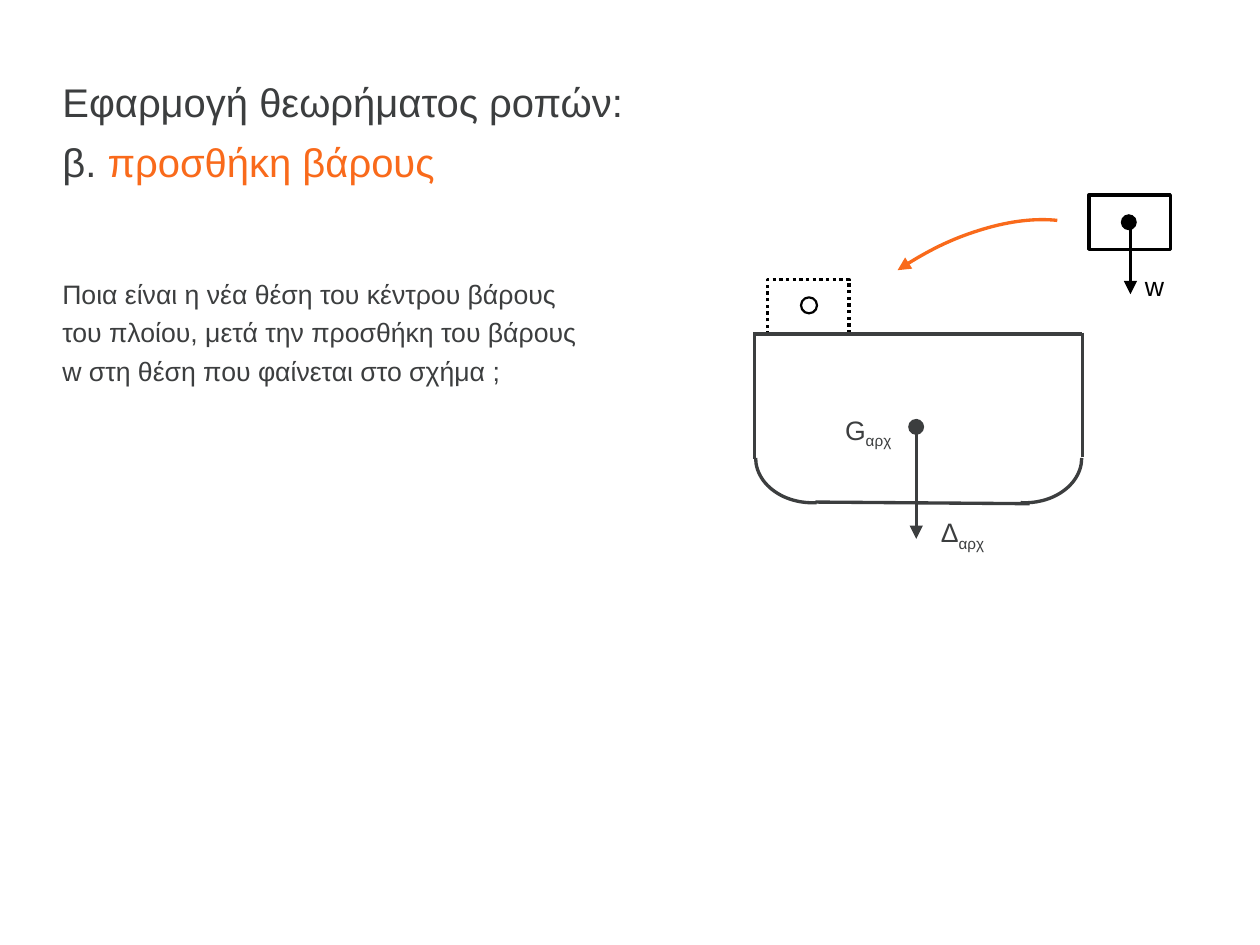
from lxml.etree import SubElement
from pptx import Presentation
from pptx.dml.color import RGBColor
from pptx.enum.dml import MSO_LINE
from pptx.enum.shapes import MSO_CONNECTOR, MSO_SHAPE
from pptx.enum.text import MSO_ANCHOR, PP_ALIGN
from pptx.oxml.ns import qn
from pptx.util import Inches, Pt

HUES = {"gray": "3C3E3F", "orange": "F96A1B", "black": "000000", "white": "FFFFFF"}


class Board:
    face = "Arial"
    pen = 1.5

    def __init__(self, slide):
        self.slide = slide
        self.area = slide.shapes

    def hue(self, name):
        return RGBColor.from_string(HUES[name])

    def group(self):
        self.area = self.slide.shapes.add_group_shape().shapes

    def ungroup(self):
        self.area = self.slide.shapes

    def stroke(self, item, color, width=pen, tip=None):
        item.line.color.rgb = self.hue(color)
        item.line.width = Pt(width)
        if tip:
            SubElement(item.line._get_or_add_ln(), qn(f"a:{tip}"), type="triangle")

    def shape(self, kind, box, fill=None, line=None, width=pen):
        item = self.area.add_shape(kind, *map(Inches, box))
        item.shadow.inherit = False
        if fill:
            item.fill.solid()
            item.fill.fore_color.rgb = self.hue(fill)
        else:
            item.fill.background()
        if line:
            self.stroke(item, line, width)
        else:
            item.line.fill.background()
        return item

    def dot(self, left, top, fill, line=None):
        return self.shape(MSO_SHAPE.OVAL, (left, top, 0.1, 0.1), fill, line, 1)

    def arc(self, box, turn, stop, color, flip=False, tip=None):
        item = self.shape(MSO_SHAPE.ARC, box)
        item.adjustments[0] = 162
        item.adjustments[1] = stop
        item.rotation = turn
        if flip:
            item._element.spPr.get_or_add_xfrm().set("flipH", "1")
        self.stroke(item, color, tip=tip)

    def line(self, x1, y1, x2, y2, color, tip=None):
        ends = map(Inches, (x1, y1, x2, y2))
        item = self.area.add_connector(MSO_CONNECTOR.STRAIGHT, *ends)
        self.stroke(item, color, tip=tip)
        SubElement(item._element.spPr, qn("a:effectLst"))

    def text(self, box, words, color="gray", size=12, space=1.2, pad=(0, 0),
             mid=False, center=False):
        frame = self.area.add_textbox(*map(Inches, box)).text_frame
        frame.word_wrap = True
        frame.margin_left = frame.margin_right = Inches(pad[0])
        frame.margin_top = frame.margin_bottom = Inches(pad[1])
        frame.vertical_anchor = MSO_ANCHOR.MIDDLE if mid else MSO_ANCHOR.TOP
        para = frame.paragraphs[0]
        para.alignment = PP_ALIGN.CENTER if center else PP_ALIGN.LEFT
        para.line_spacing = space
        para.font.name = self.face
        para.font.size = Pt(size)
        para.font.color.rgb = self.hue(color)
        para.add_run().text = words
        return para

    def label(self, box, words, sub=None, **style):
        para = self.text(box, words, center=True, **style)
        if sub:
            run = para.add_run()
            run.text = sub
            run._r.get_or_add_rPr().set("baseline", "-25000")


def main():
    deck = Presentation()
    deck.slide_width, deck.slide_height = Inches(7.88), Inches(5.91)
    board = Board(deck.slides.add_slide(deck.slide_layouts[6]))

    # Title and question
    title = board.text((0.39, 0.39, 7.09, 0.79), "Εφαρμογή θεωρήματος ροπών:",
                       size=18, space=1.25, mid=True)
    title.add_line_break()
    title.add_run().text = "β. "
    topic = title.add_run()
    topic.text = "προσθήκη βάρους"
    topic.font.color.rgb = board.hue("orange")
    board.text((0.39, 1.65, 3.23, 0.83),
               "Ποια είναι η νέα θέση του κέντρου βάρους του πλοίου, μετά την "
               "προσθήκη του βάρους w στη θέση που φαίνεται στο σχήμα ;",
               pad=(0, 0.05))

    # Centre of the ship, new place of the weight, and the weight
    board.dot(5.68, 2.62, "gray")
    ghost = board.shape(MSO_SHAPE.RECTANGLE, (4.8, 1.75, 0.51, 0.34), line="black")
    ghost.line.dash_style = MSO_LINE.ROUND_DOT
    board.dot(5.01, 1.86, "white", "black")
    board.shape(MSO_SHAPE.RECTANGLE, (6.81, 1.22, 0.51, 0.34), "white", "black")

    # Hull
    board.group()
    for ends in ((4.71, 2.09, 6.77, 2.09), (4.72, 2.08, 4.72, 2.87),
                 (6.77, 2.08, 6.77, 2.86), (5.1, 3.14, 6.44, 3.15)):
        board.line(*ends, "gray")
    for left, turn, flip in ((6.13, 90, False), (4.8, 270, True)):
        board.arc((left, 2.51, 0.56, 0.71), turn, 3.264, "gray", flip)
    board.ungroup()

    # Forces and the move
    board.dot(7.01, 1.34, "black")
    board.line(7.07, 1.4, 7.07, 1.84, "black", "tailEnd")
    board.line(5.73, 2.62, 5.73, 3.37, "gray", "tailEnd")
    board.arc((4.78, 1.58, 2.39, 1.3), 326.2, 204.363, "orange", tip="headEnd")

    # Labels
    board.label((7.13, 1.66, 0.18, 0.22), "w", color="black", mid=True)
    board.label((5.81, 3.17, 0.42, 0.3), "Δ", "αρχ", pad=(0.04, 0.04), mid=True)
    board.label((5.19, 2.54, 0.48, 0.22), "G", "αρχ")

    deck.save("out.pptx")


if __name__ == "__main__":
    main()
